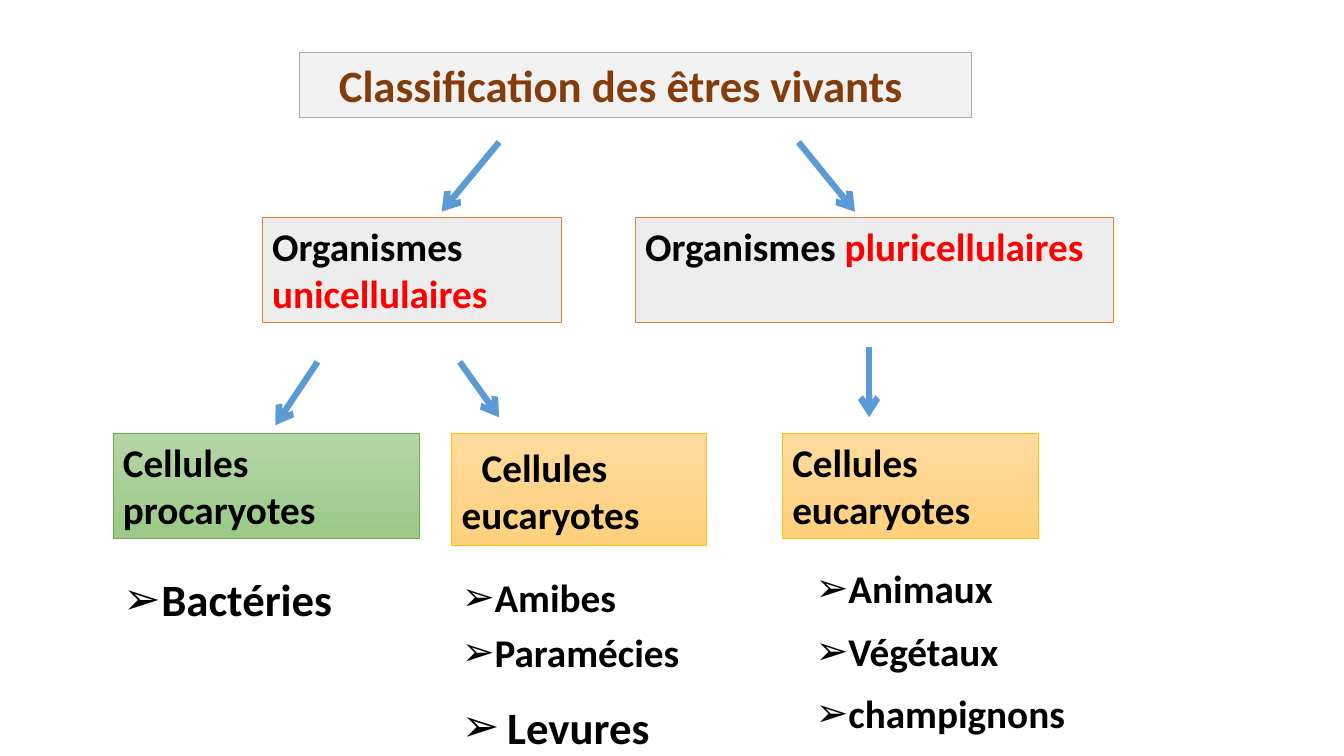
from lxml import etree
from pptx import Presentation
from pptx.dml.color import RGBColor
from pptx.enum.shapes import MSO_CONNECTOR as CONN, MSO_SHAPE as SHAPE
from pptx.enum.text import MSO_ANCHOR as ANCHOR, MSO_AUTO_SIZE as AUTO, PP_ALIGN as ALIGN
from pptx.oxml.ns import qn
from pptx.util import Inches, Pt


def rgb(code):
    return RGBColor.from_string(code)


class Diagram:
    FONT, TEXT, ACCENT, ARROW = "Calibri", "000000", "FF0000", "5B9BD5"

    def __init__(self, slide):
        self.s = slide

    def place(self, sp, x, y, w, h):
        sp.left, sp.top, sp.width, sp.height = (Inches(v) for v in (x, y, w, h))
        tf = sp.text_frame
        tf.word_wrap, tf.auto_size = True, AUTO.NONE
        tf.vertical_anchor = ANCHOR.TOP
        tf.margin_left = tf.margin_right = Inches(0.1)
        tf.margin_top = tf.margin_bottom = Inches(0.05)
        return tf

    def style(self, r, size, color=TEXT):
        r.font.name, r.font.size, r.font.bold = self.FONT, Pt(size), True
        r.font.color.rgb = rgb(color)

    def paint(self, sp, fill, line):
        """Fill with one colour, or shade from top to bottom with a pair."""
        if isinstance(fill, str):
            sp.fill.solid()
            sp.fill.fore_color.rgb = rgb(fill)
        else:
            sp.fill.gradient()
            sp.fill.gradient_angle = 270
            for stop, color in zip(sp.fill.gradient_stops, fill):
                stop.color.rgb = rgb(color)
        sp.line.color.rgb = rgb(line)
        sp.line.width = Pt(0.5)

    def title(self, text, at, fill, line, color):
        sp = self.s.shapes.title
        tf = self.place(sp, *at)
        tf.margin_left = Inches(0.39)
        self.paint(sp, fill, line)
        tf.text = text
        p = tf.paragraphs[0]
        p.alignment = ALIGN.LEFT
        self.style(p.runs[0], 32, color)

    def box(self, text, at, fill, line, accent="", indent=0):
        sp = self.s.shapes.add_shape(SHAPE.RECTANGLE, 0, 0, 0, 0)
        sp.shadow.inherit = False
        tf = self.place(sp, *at)
        self.paint(sp, fill, line)
        tf.text = text
        p = tf.paragraphs[0]
        p.alignment = ALIGN.LEFT
        self.style(p.runs[0], 28)
        if accent:
            r = p.add_run()
            r.text = accent
            self.style(r, 28, self.ACCENT)
        if indent:
            p._p.get_or_add_pPr().set("indent", str(Inches(indent)))
            tf.margin_top = Inches(0.1)

    def arrow(self, x1, y1, x2, y2):
        c = self.s.shapes.add_connector(CONN.STRAIGHT, *(Inches(v) for v in (x1, y1, x2, y2)))
        c.line.color.rgb = rgb(self.ARROW)
        c.line.width = Pt(4.5)
        etree.SubElement(c.line._get_or_add_ln(), qn("a:tailEnd"), type="arrow")
        etree.SubElement(c._element.spPr, qn("a:effectLst"))

    def bullets(self, idx, at, items):
        """Each item is (text, size, space before, hanging indent)."""
        tf = self.place(self.s.placeholders[idx], *at)
        tf.text = "\n".join(item[0] for item in items)
        for p, (_, size, before, hang) in zip(tf.paragraphs, items):
            pPr = p._p.get_or_add_pPr()
            pPr.set("marL", str(Inches(hang)))
            pPr.set("indent", str(-Inches(hang)))
            etree.SubElement(pPr, qn("a:buChar"), char="➢")
            p.alignment = ALIGN.LEFT
            p.space_before = Pt(before)
            self.style(p.runs[0], size)


def main():
    prs = Presentation()
    prs.slide_width, prs.slide_height = Inches(13.33), Inches(7.5)
    s = prs.slides.add_slide(prs.slide_layouts[4])
    d = Diagram(s)

    # Title
    d.title("Classification des êtres vivants", (2.97, 0.52, 6.66, 0.64),
            "F2F2F2", "AFABAB", "843C0B")

    # Organisms
    for accent, x, w in (("unicellulaires", 2.6, 2.97), ("pluricellulaires", 6.3, 4.74)):
        d.box("Organismes ", (x, 2.16, w, 1.04), "EDEDED", "ED7D31", accent)

    # Cell types
    green, amber = ("B5D5A7", "9CC987"), ("FFDB9E", "FFD07C")
    d.box("Cellules procaryotes", (1.12, 4.3, 3.04, 1.04), green, "70AD47")
    d.box("Cellules eucaryotes", (4.48, 4.3, 2.53, 1.11), amber, "FFC000", indent=0.2)
    d.box("Cellules eucaryotes", (7.76, 4.3, 2.54, 1.04), amber, "FFC000")

    # Arrows between the levels
    for ends in ((4.95, 1.41, 4.38, 2.1), (7.92, 1.41, 8.48, 2.1),
                 (3.15, 3.59, 2.73, 4.22), (4.56, 3.59, 4.95, 4.14),
                 (8.62, 3.44, 8.62, 4.14)):
        d.arrow(*ends)

    # Examples
    d.bullets(1, (1.12, 5.62, 2.67, 0.71), [("Bactéries", 32, 0, 0.38)])
    d.bullets(2, (4.48, 5.64, 3.05, 1.9),
              [("Amibes", 28, 0, 0.32), ("Paramécies", 28, 5.5, 0.32), ("Levures", 32, 17, 0.45)])
    d.bullets(4, (7.99, 5.55, 3.36, 1.82),
              [(name, 28, 11 if i else 0, 0.32)
               for i, name in enumerate(("Animaux", "Végétaux", "champignons"))])

    # Drop the unused placeholder
    unused = s.placeholders[3]._element
    unused.getparent().remove(unused)

    prs.save("out.pptx")


if __name__ == "__main__":
    main()
